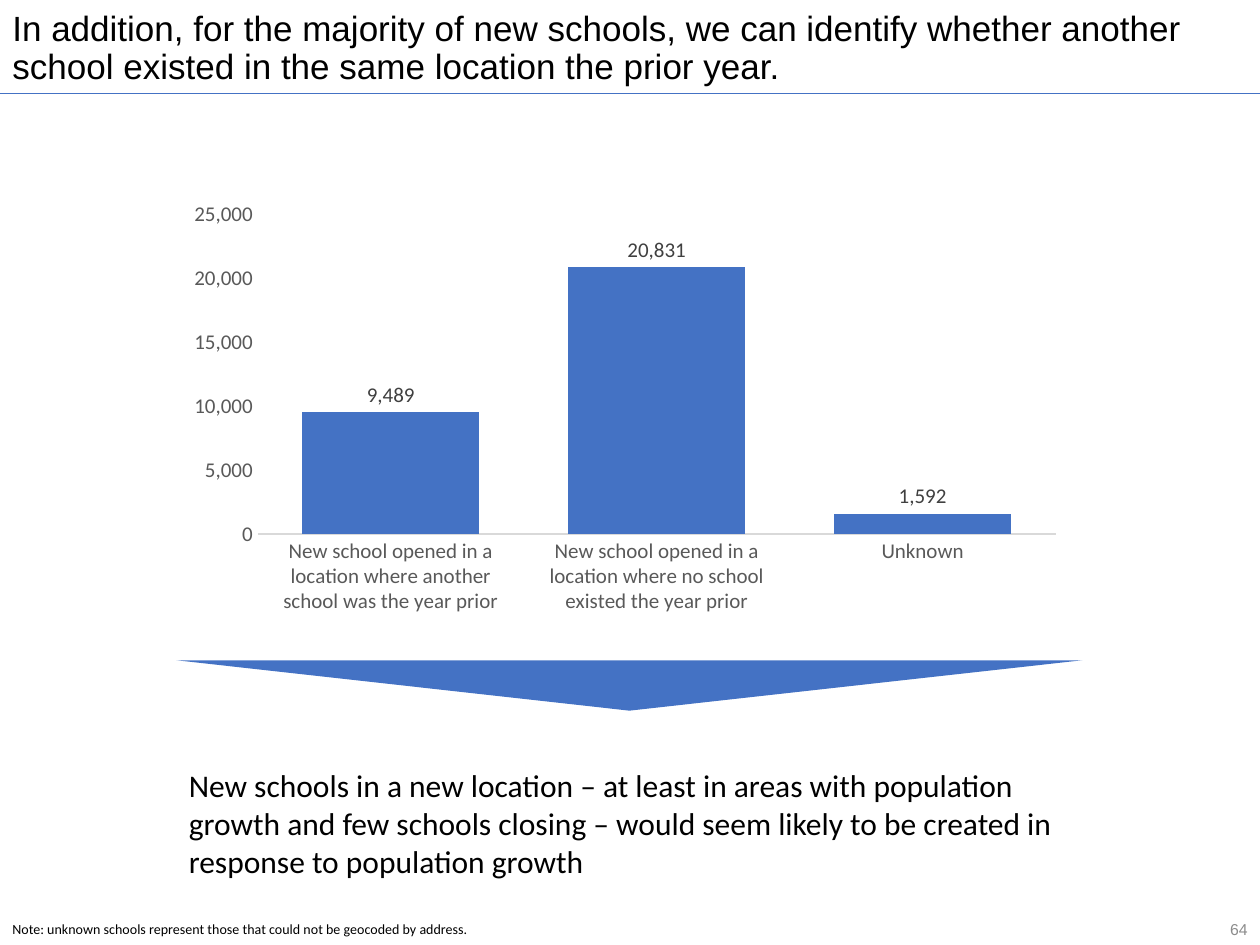
from lxml import etree
from pptx import Presentation
from pptx.chart.data import CategoryChartData
from pptx.dml.color import RGBColor
from pptx.enum.chart import XL_CHART_TYPE, XL_LABEL_POSITION, XL_TICK_MARK
from pptx.enum.shapes import MSO_CONNECTOR, MSO_SHAPE
from pptx.enum.text import MSO_ANCHOR, PP_ALIGN
from pptx.oxml.ns import qn
from pptx.util import Inches, Pt

TOP, BOTTOM = MSO_ANCHOR.TOP, MSO_ANCHOR.BOTTOM
LEFT, RIGHT = PP_ALIGN.LEFT, PP_ALIGN.RIGHT
NO_TICK = XL_TICK_MARK.NONE

BLUE, BLACK, GRAY = "4472C4", "000000", "595959"
SLIDE_WIDTH, SLIDE_HEIGHT = 10, 7.5
TITLE_HEIGHT = 0.74
BODY_LEFT, BODY_WIDTH = 1.4, 7.12

# Content: text, box, font, size, colour, alignment, anchor, line spacing, wrap
TEXTS = [
    ("In addition, for the majority of new schools, we can identify whether "
     "another school existed in the same location the prior year.",
     (0, 0, SLIDE_WIDTH, TITLE_HEIGHT), "Arial", 20, BLACK, LEFT, BOTTOM, 0.9, True),
    ("64", (9.42, 7.1, 0.58, 0.4), "Arial", 9, "8C8C8C", RIGHT, BOTTOM, 1, True),
    ("New schools in a new location – at least in areas with population growth "
     "and few schools closing – would seem likely to be created in response to "
     "population growth",
     (BODY_LEFT, 6.03, BODY_WIDTH, 1.01), "Calibri", 18, BLACK, LEFT, TOP, 1, True),
    ("Note: unknown schools represent those that could not be geocoded by address.",
     (0, 7.26, 3.83, 0.24), "Calibri", 8, BLACK, LEFT, TOP, 1, False),
]
SCHOOLS = {
    "New school opened in a location where another school was the year prior": 9489,
    "New school opened in a location where no school existed the year prior": 20831,
    "Unknown": 1592,
}


def color(value):
    return RGBColor.from_string(value)


def set_font(font, name, size, value):
    font.name, font.size = name, Pt(size)
    font.color.rgb = color(value)


def add_text(slide, text, box, name, size, value, align, anchor, spacing, wrap):
    frame = slide.shapes.add_textbox(*map(Inches, box)).text_frame
    frame.word_wrap = wrap
    frame.vertical_anchor = anchor
    paragraph = frame.paragraphs[0]
    paragraph.text = text
    paragraph.alignment = align
    paragraph.line_spacing = spacing
    set_font(paragraph.font, name, size, value)


def add_school_chart(slide):
    data = CategoryChartData(number_format="#,##0")
    data.categories = list(SCHOOLS)
    data.add_series("Series 1", list(SCHOOLS.values()))
    box = map(Inches, (BODY_LEFT, 1.53, BODY_WIDTH, 3.41))
    chart = slide.shapes.add_chart(XL_CHART_TYPE.COLUMN_CLUSTERED, *box, data).chart
    chart.has_legend = chart.has_title = False
    set_font(chart.font, "Calibri", 10, BLACK)

    # Axes
    for axis in (chart.category_axis, chart.value_axis):
        axis.major_tick_mark = axis.minor_tick_mark = NO_TICK
        axis.has_major_gridlines = False
        set_font(axis.tick_labels.font, "Calibri", 12, GRAY)
    chart.category_axis.format.line.color.rgb = color("D9D9D9")
    chart.category_axis.format.line.width = Pt(0.75)
    chart.value_axis.format.line.fill.background()
    chart.value_axis.tick_labels.number_format = "#,##0"
    chart.value_axis.tick_labels.number_format_is_linked = False

    # Columns and their labels
    plot = chart.plots[0]
    plot.gap_width, plot.overlap = 50, -27
    plot.vary_by_categories = False
    series = plot.series[0]
    series.format.fill.solid()
    series.format.fill.fore_color.rgb = color(BLUE)
    labels = series.data_labels
    labels.show_value = True
    labels.position = XL_LABEL_POSITION.OUTSIDE_END
    labels.number_format = "#,##0"
    labels.number_format_is_linked = False
    set_font(labels.font, "Calibri", 12, "404040")


def main():
    presentation = Presentation()
    presentation.slide_width = Inches(SLIDE_WIDTH)
    presentation.slide_height = Inches(SLIDE_HEIGHT)
    slide = presentation.slides.add_slide(presentation.slide_layouts[6])

    # Rule under the title
    rule = slide.shapes.add_connector(
        MSO_CONNECTOR.STRAIGHT, 0, Inches(TITLE_HEIGHT),
        Inches(SLIDE_WIDTH), Inches(TITLE_HEIGHT))
    rule.line.color.rgb = color(BLUE)
    rule.line.width = Pt(0.5)
    properties = rule.line._get_or_add_ln().getparent()
    etree.SubElement(properties, qn("a:effectLst"))

    # Downward pointer from the chart to the conclusion
    pointer = slide.shapes.add_shape(
        MSO_SHAPE.ISOSCELES_TRIANGLE, *map(Inches, (BODY_LEFT, 5.24, 7.19, 0.4)))
    pointer.rotation = 180
    pointer.shadow.inherit = False
    pointer.fill.solid()
    pointer.fill.fore_color.rgb = color(BLUE)
    pointer.line.fill.background()

    add_school_chart(slide)
    for text in TEXTS:
        add_text(slide, *text)
    presentation.save("out.pptx")


if __name__ == "__main__":
    main()
